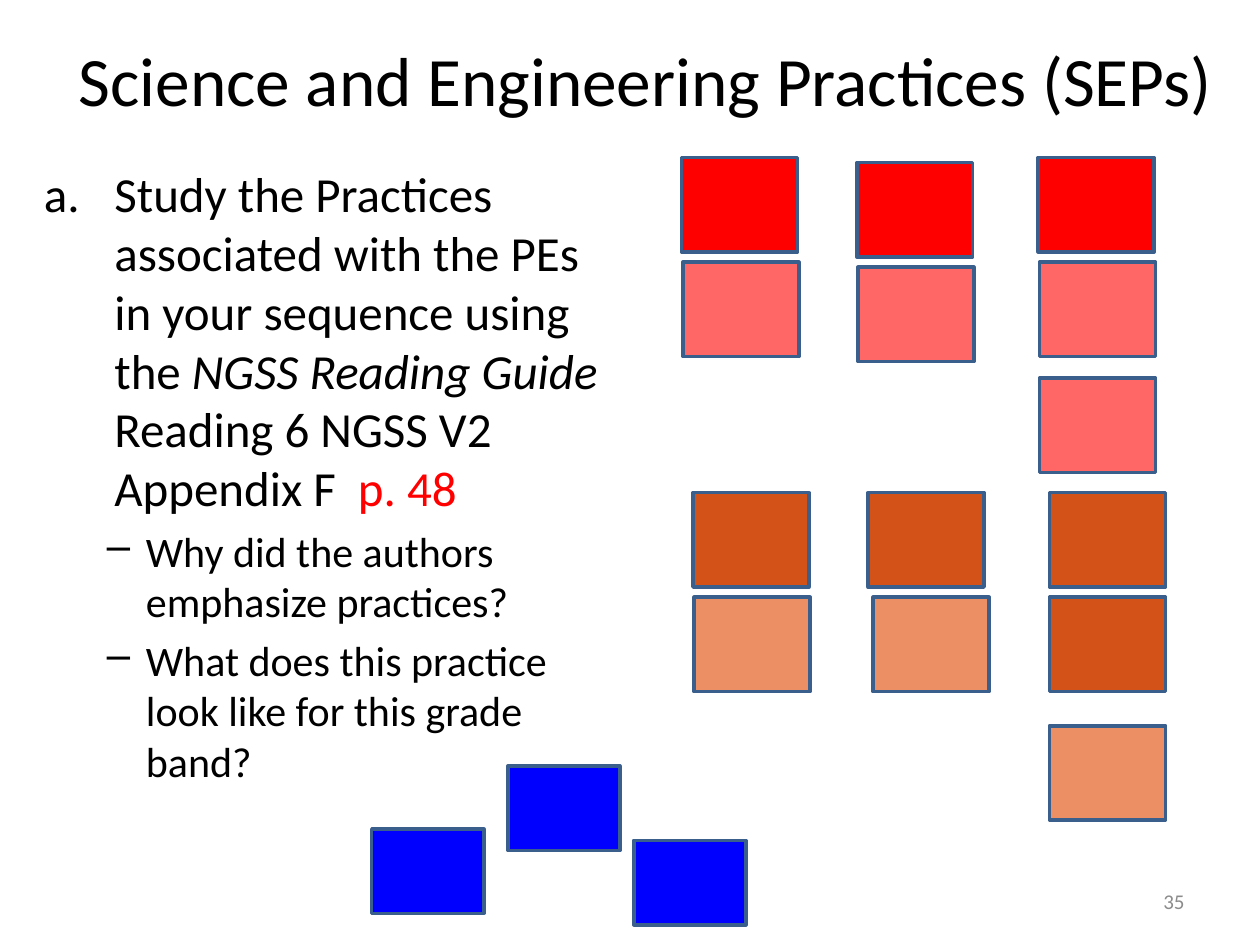
from dataclasses import dataclass

from lxml.etree import SubElement
from pptx import Presentation
from pptx.dml.color import RGBColor
from pptx.enum.shapes import MSO_SHAPE
from pptx.enum.text import MSO_ANCHOR, PP_ALIGN
from pptx.oxml.ns import qn
from pptx.util import Inches, Pt


@dataclass(frozen=True)
class Theme:
    """Colours, font and type sizes of the slide."""
    font: str = "Calibri"
    ink: str = "000000"
    accent: str = "FF0000"
    muted: str = "8C8C8C"
    outline: str = "3A5F8C"
    blue: str = "0000FF"
    red: str = "FF0000"
    pink: str = "FF6666"
    rust: str = "D25218"
    peach: str = "ED8F65"
    title_size: float = 39.6
    task_size: float = 28
    question_size: float = 24
    number_size: float = 12


THEME = Theme()
COLUMNS = (0, 1.39, 2.83)
ROW_STEP = 0.83
CARD = (0.92, 0.75)
BLUE_CARD = (0.89, 0.67)


def add_text_box(slide, left, top, width, height, anchor=MSO_ANCHOR.TOP):
    """Add a wrapping text box and return its text frame."""
    frame = slide.shapes.add_textbox(
        Inches(left), Inches(top), Inches(width), Inches(height)).text_frame
    frame.word_wrap = True
    frame.vertical_anchor = anchor
    return frame


def format_run(run, size, colour=THEME.ink, italic=False):
    """Apply the theme font with a size, colour and slant."""
    run.font.name = THEME.font
    run.font.size = Pt(size)
    run.font.italic = italic
    run.font.color.rgb = RGBColor.from_string(colour)


def add_line(frame, text, size, align, colour=THEME.ink):
    """Write a frame that holds a single paragraph."""
    frame.text = text
    paragraph = frame.paragraphs[0]
    paragraph.alignment = align
    format_run(paragraph.runs[0], size, colour)


def set_bullet(paragraph, margin, hang, size, tag, **attributes):
    """Give a paragraph a hanging bullet and a fifth of a line before it."""
    paragraph.space_before = Pt(size * 0.2)
    properties = paragraph._p.get_or_add_pPr()
    properties.set("marL", str(Inches(margin)))
    properties.set("indent", str(-Inches(hang)))
    SubElement(properties, qn(tag), attributes)


def add_task(frame, parts):
    """Write the lettered task from text, colour and slant parts."""
    task = frame.paragraphs[0]
    for text, colour, italic in parts:
        run = task.add_run()
        run.text = text
        format_run(run, THEME.task_size, colour, italic)
    set_bullet(task, 0.56, 0.56, THEME.task_size, "a:buAutoNum", type="alphaLcPeriod")


def add_question(frame, text):
    """Add a dashed question below the task."""
    question = frame.add_paragraph()
    question.text = text
    question.level = 1
    format_run(question.runs[0], THEME.question_size)
    set_bullet(question, 0.81, 0.31, THEME.question_size, "a:buChar", char="–")


def add_cards(slide, colour, size, places):
    """Add a group of equal outlined cards at the given places."""
    group = slide.shapes.add_group_shape()
    for left, top in places:
        card = group.shapes.add_shape(
            MSO_SHAPE.RECTANGLE, *map(Inches, (left, top, *size)))
        card.shadow.inherit = False
        card.fill.solid()
        card.fill.fore_color.rgb = RGBColor.from_string(colour)
        card.line.color.rgb = RGBColor.from_string(THEME.outline)
        card.line.width = Pt(2)


def grid_places(left, top, cells):
    """Turn column, row and nudge cells into places on the card grid."""
    return [(left + COLUMNS[column] + right, top + row * ROW_STEP + down)
            for column, row, right, down in cells]


def main():
    """Build the practices slide and save it."""
    deck = Presentation()
    deck.slide_width, deck.slide_height = Inches(10), Inches(7.5)
    slide = deck.slides.add_slide(deck.slide_layouts[6])

    title = add_text_box(slide, 0.25, 0, 9.75, 1.25, MSO_ANCHOR.MIDDLE)
    add_line(title, "Science and Engineering Practices (SEPs)",
             THEME.title_size, PP_ALIGN.CENTER)

    body = add_text_box(slide, 0.25, 1.25, 4.67, 6)
    add_task(body, [
        ("Study the Practices associated with the PEs in your sequence using the ",
         THEME.ink, False),
        ("NGSS Reading Guide ", THEME.ink, True),
        ("Reading 6 NGSS V2 Appendix F  ", THEME.ink, False),
        ("p. 48", THEME.accent, False),
    ])
    add_question(body, "Why did the authors emphasize practices?")
    add_question(body, "What does this practice look like for this grade band?")

    add_cards(slide, THEME.blue, BLUE_CARD, [(2.95, 6.58), (4.03, 6.08), (5.03, 6.67)])
    for colour, left, top, cells in (
        (THEME.rust, 5.5, 3.91,
         [(2, 1, 0, 0), (2, 0, 0, 0), (0, 0, 0, 0), (1, 0, 0, 0)]),
        (THEME.peach, 5.5, 3.91,
         [(0, 1, 0.01, 0), (1, 1, 0.04, 0), (2, 2, 0, 0.19)]),
        (THEME.red, 5.41, 1.25,
         [(0, 0, 0, 0), (1, 0, 0, 0.04), (2, 0, 0, 0)]),
        (THEME.pink, 5.42, 1.25,
         [(0, 1, 0, 0), (1, 1, 0, 0.04), (2, 1, 0, 0), (2, 2, 0, 0.09)]),
    ):
        add_cards(slide, colour, CARD, grid_places(left, top, cells))

    number = add_text_box(slide, 7.17, 6.95, 2.33, 0.4, MSO_ANCHOR.MIDDLE)
    add_line(number, "35", THEME.number_size, PP_ALIGN.RIGHT, THEME.muted)

    deck.save("out.pptx")


if __name__ == "__main__":
    main()
